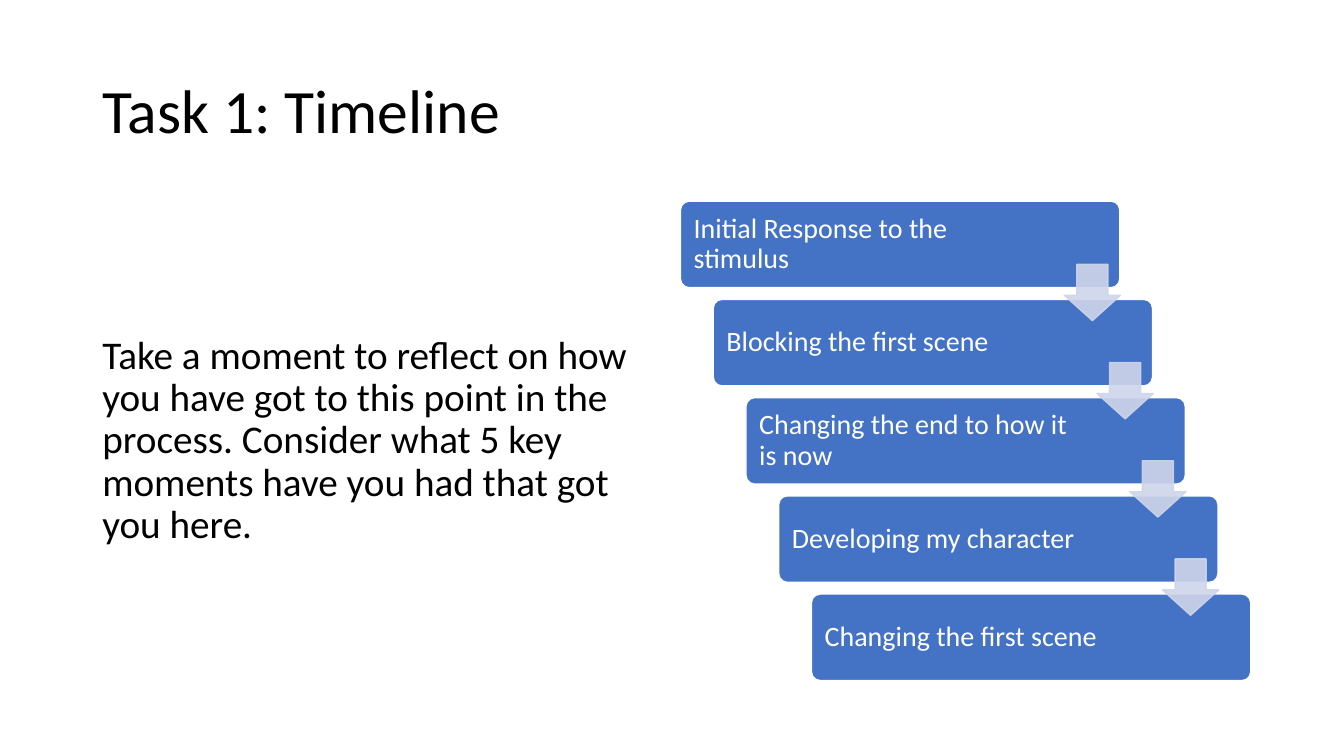
from pptx import Presentation
from pptx.dml.color import RGBColor
from pptx.enum import shapes, text
from pptx.oxml import ns
from pptx.util import Cm, Pt
from lxml import etree

COLORS = {"ink": "000000", "bar": "4472C4", "white": "FFFFFF", "arrow": "CFD5EA"}
STEPS = [
    "Initial Response to the stimulus",
    "Blocking the first scene",
    "Changing the end to how it is now",
    "Developing my character",
    "Changing the first scene",
]
STEP_X, STEP_Y = 0.825, 2.475


def write(sp, content, size, color, **paragraph_format):
    tf = sp.text_frame
    frame_format = {
        "word_wrap": True,
        "auto_size": text.MSO_AUTO_SIZE.NONE,
        "vertical_anchor": text.MSO_ANCHOR.MIDDLE,
    }
    for name, value in frame_format.items():
        setattr(tf, name, value)
    p = tf.paragraphs[0]
    paragraph_format.update(alignment=text.PP_ALIGN.LEFT, line_spacing=0.9)
    for name, value in paragraph_format.items():
        setattr(p, name, value)
    r = p.add_run()
    r.text = content
    for name, value in {"name": "Calibri", "size": Pt(size)}.items():
        setattr(r.font, name, value)
    r.font.color.rgb = RGBColor.from_string(COLORS[color])


def add_block(group, kind, box, adjustments, fill, line):
    sp = group.shapes.add_shape(kind, *map(Cm, box))
    sp.shadow.inherit = False
    for i, value in enumerate(adjustments):
        sp.adjustments[i] = value
    sp.fill.solid()
    sp.fill.fore_color.rgb = RGBColor.from_string(COLORS[fill])
    sp.line.color.rgb = RGBColor.from_string(COLORS[line])
    sp.line.width = Pt(1)
    return sp


prs = Presentation()
prs.slide_width, prs.slide_height = Cm(33.87), Cm(19.05)
s = prs.slides.add_slide(prs.slide_layouts[5])

title = s.shapes.title
title_box = {"left": 2.33, "top": 1.01, "width": 29.21, "height": 3.68}
for name, value in title_box.items():
    setattr(title, name, Cm(value))
write(title, "Task 1: Timeline", 44, "ink")

body = s.shapes.add_textbox(Cm(2.33), Cm(5.07), Cm(14.4), Cm(12.09))
write(
    body,
    "Take a moment to reflect on how you have got to this point in the process. "
    "Consider what 5 key moments have you had that got you here.",
    28, "ink", space_before=Pt(10),
)

timeline = s.shapes.add_group_shape()
for i, step in enumerate(STEPS):
    box = (17.15 + i * STEP_X, 5.07 + i * STEP_Y, 11.07, 2.18)
    bar = add_block(timeline, shapes.MSO_SHAPE.ROUNDED_RECTANGLE, box, [0.1], "bar", "white")
    for name, value in {"margin_left": 0.27, "margin_right": 2.6}.items():
        setattr(bar.text_frame, name, Cm(value))
    write(bar, step, 20, "white")

for i in range(len(STEPS) - 1):
    box = (26.82 + i * STEP_X, 6.66 + i * STEP_Y, 1.42, 1.42)
    arrow = add_block(timeline, shapes.MSO_SHAPE.DOWN_ARROW, box, [0.55, 0.45], "arrow", "arrow")
    for color in arrow.element.spPr.iter(ns.qn("a:srgbClr")):
        etree.SubElement(color, ns.qn("a:alpha"), val="90000")

prs.save("out.pptx")
